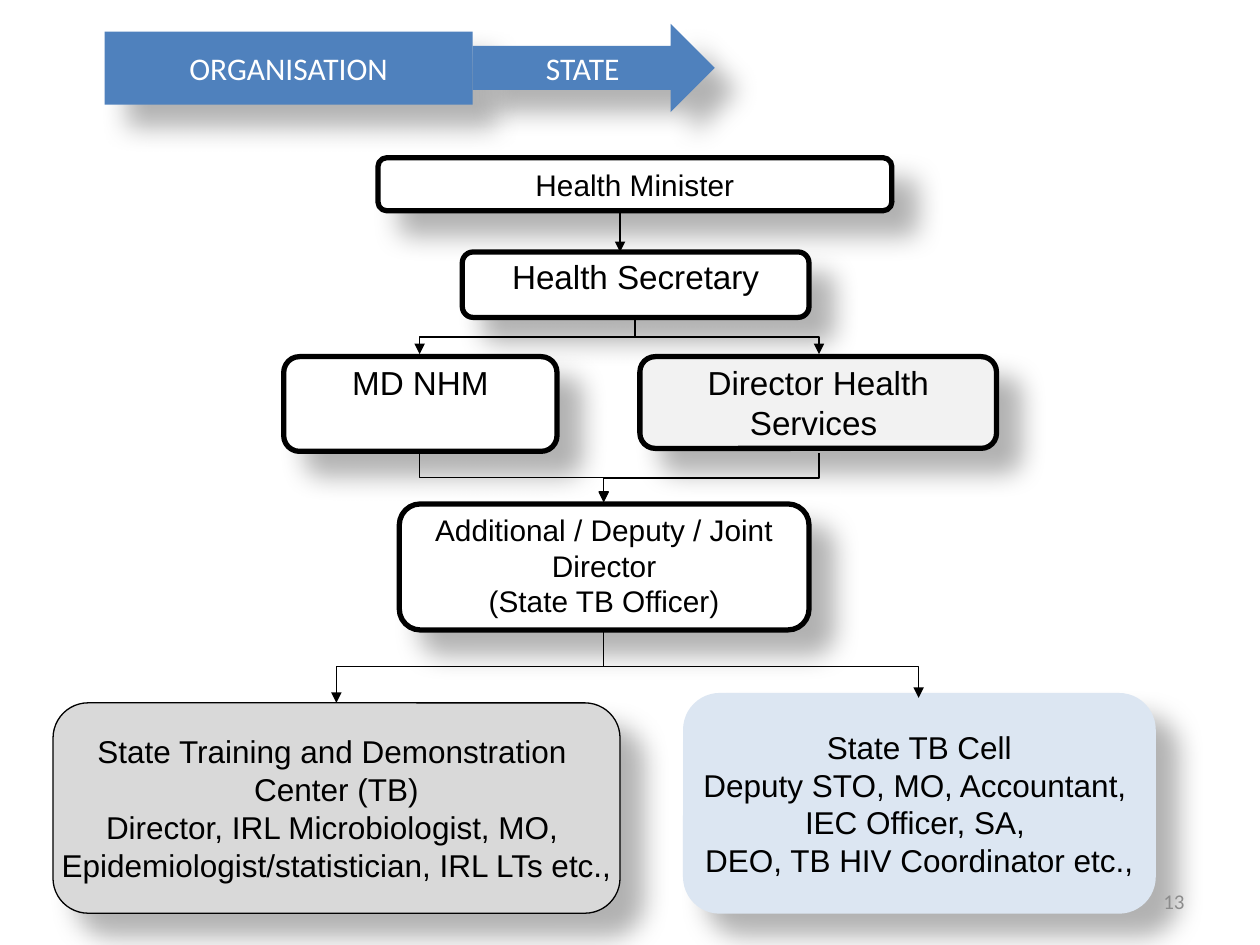
from lxml import etree
from pptx import Presentation
from pptx.dml.color import RGBColor
from pptx.enum.shapes import MSO_CONNECTOR, MSO_SHAPE
from pptx.enum.text import MSO_ANCHOR, PP_ALIGN
from pptx.oxml import parse_xml
from pptx.oxml.ns import qn
from pptx.util import Cm, Pt

SHADOW = (
    '<a:outerShdw xmlns:a="http://schemas.openxmlformats.org/drawingml/2006/main" '
    'blurRad="190500" dist="228600" dir="2700000" algn="tl" rotWithShape="0">'
    '<a:srgbClr val="000000"><a:alpha val="30000"/></a:srgbClr></a:outerShdw>'
)


def colour(hex_string):
    return RGBColor.from_string(hex_string)


def write_text(shape, text, size, font, hex_string, align):
    shape.text_frame.text = text
    for para in shape.text_frame.paragraphs:
        para.alignment = align
        for span in para.runs:
            span.font.size = Pt(size)
            span.font.name = font
            span.font.color.rgb = colour(hex_string)


deck = Presentation()
deck.slide_width, deck.slide_height = Cm(25.4), Cm(19.05)
page = deck.slides.add_slide(deck.slide_layouts[6])

# Heading banner: text, preset, left, top, width, height
banners = [
    ("ORGANISATION", MSO_SHAPE.RECTANGLE, 2.11, 0.64, 7.42, 1.47),
    ("STATE", MSO_SHAPE.RIGHT_ARROW, 9.53, 0.48, 4.88, 1.78),
]
# Chart boxes: text, left, top, width, height, fill, line width, text size
offices = [
    ("Health Minister", 7.62, 3.18, 10.36, 1.07, "FFFFFF", 3, 17),
    ("Health Secretary", 9.32, 5.08, 6.99, 1.32, "FFFFFF", 3, 19),
    ("MD NHM", 5.72, 7.19, 5.51, 1.91, "FFFFFF", 3, 19),
    ("Director Health Services ", 12.9, 7.19, 7.19, 1.85, "F2F2F2", 3, 19),
    ("Additional / Deputy / Joint Director\n(State TB Officer)",
     8.05, 10.16, 8.26, 2.54, "FFFFFF", 3, 17),
    ("State TB Cell\nDeputy STO, MO, Accountant, \nIEC Officer, SA, \n"
     "DEO, TB HIV Coordinator etc.,", 13.77, 13.97, 9.53, 4.45, "DCE6F2", 0, 18),
    ("State Training and Demonstration \nCenter (TB)\n"
     "Director, IRL Microbiologist, MO, \nEpidemiologist/statistician, IRL LTs etc.,",
     1.07, 14.17, 11.43, 4.24, "D9D9D9", 0.75, 18),
]

boxes = []
for text, left, top, width, height, fill, line_width, size in offices:
    box = page.shapes.add_shape(
        MSO_SHAPE.ROUNDED_RECTANGLE, Cm(left), Cm(top), Cm(width), Cm(height))
    boxes.append(box)
    box.fill.solid()
    box.fill.fore_color.rgb = colour(fill)
    if line_width:
        box.line.color.rgb = colour("000000")
        box.line.width = Pt(line_width)
    else:
        box.line.fill.background()
    write_text(box, text, size, "Arial", "000000", PP_ALIGN.CENTER)
    frame = box.text_frame
    is_unit = size == 18
    frame.word_wrap = not is_unit
    frame.vertical_anchor = MSO_ANCHOR.MIDDLE if is_unit else MSO_ANCHOR.TOP
    if not is_unit and text != "Health Minister":
        frame.margin_left = frame.margin_right = Cm(0.05)
        frame.margin_top = frame.margin_bottom = Cm(0.03)

# Arrows: start x, start y, end x, end y
arrows = [
    (12.5, 4.24, 12.5, 5.08),
    (12.8, 6.45, 8.46, 7.14),
    (12.8, 6.45, 16.51, 7.14),
    (8.46, 9.14, 12.17, 10.11),
    (16.51, 9.14, 12.17, 10.13),
    (12.17, 12.7, 6.78, 14.17),
    (12.17, 12.8, 18.52, 14.07),
]
for x1, y1, x2, y2 in arrows:
    if x1 == x2:
        arrow = page.shapes.add_connector(
            MSO_CONNECTOR.STRAIGHT, Cm(x1), Cm(y1), Cm(x2), Cm(y2))
    else:
        # A quarter turn about the centre makes the elbow leave vertically
        middle_x, middle_y = (x1 + x2) / 2, (y1 + y2) / 2
        half_width, half_height = (y2 - y1) / 2, abs(x2 - x1) / 2
        if x2 > x1:
            half_width = -half_width
        arrow = page.shapes.add_connector(
            MSO_CONNECTOR.ELBOW,
            Cm(middle_x - half_width), Cm(middle_y - half_height),
            Cm(middle_x + half_width), Cm(middle_y + half_height))
        degrees = 270 if x2 > x1 else 90
        arrow.element.spPr.find(qn("a:xfrm")).set("rot", str(degrees * 60000))
    arrow.line.color.rgb = colour("000000")
    arrow.line.width = Pt(0.75)
    etree.SubElement(arrow.line._get_or_add_ln(), qn("a:tailEnd"), type="triangle")
    etree.SubElement(arrow.element.spPr, qn("a:effectLst"))

number = page.shapes.add_textbox(Cm(18.21), Cm(17.65), Cm(5.92), Cm(1.02))
write_text(number, "13", 12, "Calibri", "8C8C8C", PP_ALIGN.RIGHT)
number.text_frame.word_wrap = True
number.text_frame.vertical_anchor = MSO_ANCHOR.MIDDLE

for text, preset, left, top, width, height in banners:
    banner = page.shapes.add_shape(preset, Cm(left), Cm(top), Cm(width), Cm(height))
    boxes.append(banner)
    banner.fill.solid()
    banner.fill.fore_color.rgb = colour("4F81BD")
    banner.line.fill.background()
    write_text(banner, text, 18, "Calibri", "FFFFFF", PP_ALIGN.CENTER)
    banner.text_frame.vertical_anchor = MSO_ANCHOR.MIDDLE

for box in boxes:
    box.shadow.inherit = False
    box.element.spPr.find(qn("a:effectLst")).append(parse_xml(SHADOW))

deck.save("out.pptx")
